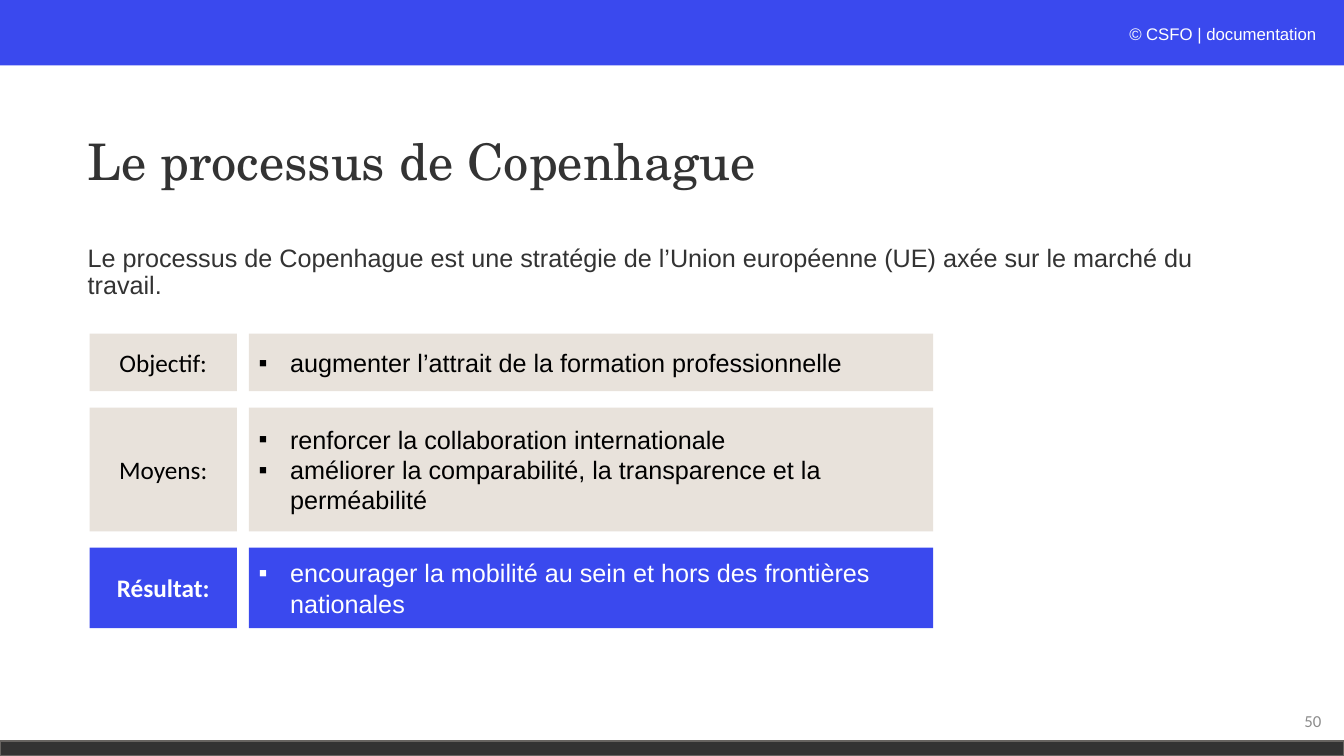
from dataclasses import dataclass

from lxml import etree
from pptx import Presentation
from pptx.dml.color import RGBColor
from pptx.enum.shapes import MSO_SHAPE as Shape
from pptx.enum.text import MSO_ANCHOR as Anchor, PP_ALIGN as Align
from pptx.oxml.ns import qn
from pptx.util import Cm, Pt


@dataclass(frozen=True)
class Theme:
    blue: str = "3A49EE"
    sand: str = "E8E2DB"
    dark: str = "333333"
    edge: str = "666360"
    grey: str = "8C8C8C"
    black: str = "000000"
    white: str = "FFFFFF"
    pale: str = "FCFDFE"
    sans: str = "Arial"
    label: str = "Calibri"
    serif: str = "TeX Gyre Schola"
    title: int = 36
    body: int = 18
    small: int = 12


THEME = Theme()
WIDTH, HEIGHT = 33.87, 19.05
ROWS_TOP, ROW_GAP = 8.41, 0.41
ROWS = [
    (1.45, "Objectif:", ["augmenter l’attrait de la formation professionnelle"], False),
    (3.12, "Moyens:", ["renforcer la collaboration internationale",
                       "améliorer la comparabilité, la transparence et la perméabilité"], False),
    (2.03, "Résultat:", ["encourager la mobilité au sein et hors des frontières nationales"], True),
]


def add_run(p, text, *, size=THEME.body, font=THEME.sans, color=THEME.dark, bold=False, italic=False):
    r = p.add_run()
    r.text = text
    r.font.size = Pt(size)
    r.font.name = font
    r.font.color.rgb = RGBColor.from_string(color)
    r.font.bold = bold
    r.font.italic = italic


def add_bullet(p, indent=0.79):
    pPr = p._p.get_or_add_pPr()
    pPr.set("marL", str(Cm(indent)))
    pPr.set("indent", str(-Cm(indent)))
    etree.SubElement(pPr, qn("a:buFont")).set("typeface", THEME.sans)
    etree.SubElement(pPr, qn("a:buChar")).set("char", "▪")


def write(sp, lines, *, align=Align.LEFT, anchor=Anchor.MIDDLE, spacing=None, bullets=False, **fmt):
    tf = sp.text_frame
    tf.word_wrap = True
    tf.vertical_anchor = anchor
    for i, line in enumerate(lines):
        p = tf.add_paragraph() if i else tf.paragraphs[0]
        p.alignment = align
        if spacing:
            p.line_spacing = spacing
        if bullets:
            add_bullet(p)
        add_run(p, line, **fmt)


def add_rect(s, x, y, w, h, fill, line=None):
    sp = s.shapes.add_shape(Shape.RECTANGLE, Cm(x), Cm(y), Cm(w), Cm(h))
    sp.shadow.inherit = False
    sp.fill.solid()
    sp.fill.fore_color.rgb = RGBColor.from_string(fill)
    if line:
        sp.line.color.rgb = RGBColor.from_string(line)
        sp.line.width = Pt(1)
    else:
        sp.line.fill.background()
    return sp


def add_text(s, x, y, w, h, lines, **fmt):
    sp = s.shapes.add_textbox(Cm(x), Cm(y), Cm(w), Cm(h))
    write(sp, lines, **fmt)
    return sp


def add_bands(s):
    add_rect(s, 0, 0, WIDTH, 1.65, THEME.blue)
    add_rect(s, 0, 18.67, WIDTH, 0.38, THEME.dark, THEME.edge)
    sp = add_text(s, 21.89, 0.48, 11.54, 0.76, ["© "], align=Align.RIGHT, anchor=Anchor.TOP,
                  size=THEME.small, color=THEME.pale, italic=True)
    add_run(sp.text_frame.paragraphs[0], "CSFO | documentation", size=THEME.small, color=THEME.white)


def add_rows(s):
    y = ROWS_TOP
    for h, label, points, strong in ROWS:
        fill = THEME.blue if strong else THEME.sand
        color = THEME.white if strong else THEME.black
        write(add_rect(s, 2.26, y, 3.71, h, fill), [label], align=Align.CENTER,
              font=THEME.label, color=color, bold=strong)
        write(add_rect(s, 6.27, y, 17.25, h, fill), points, bullets=True, color=color)
        y += h + ROW_GAP


def main():
    prs = Presentation()
    prs.slide_width, prs.slide_height = Cm(WIDTH), Cm(HEIGHT)
    s = prs.slides.add_slide(prs.slide_layouts[6])
    add_bands(s)
    add_text(s, 1.96, 2.31, 22.4, 3.68, ["Le processus de Copenhague"], spacing=0.9,
             size=THEME.title, font=THEME.serif)
    add_text(s, 1.96, 6.07, 29.21, 2.1,
             ["Le processus de Copenhague est une stratégie de l’Union européenne (UE) "
              "axée sur le marché du travail."], anchor=Anchor.TOP, spacing=0.9)
    add_rows(s)
    add_text(s, 25.93, 17.65, 7.62, 1.02, ["50"], align=Align.RIGHT, size=THEME.small,
             font=THEME.label, color=THEME.grey)
    prs.save("out.pptx")


if __name__ == "__main__":
    main()
